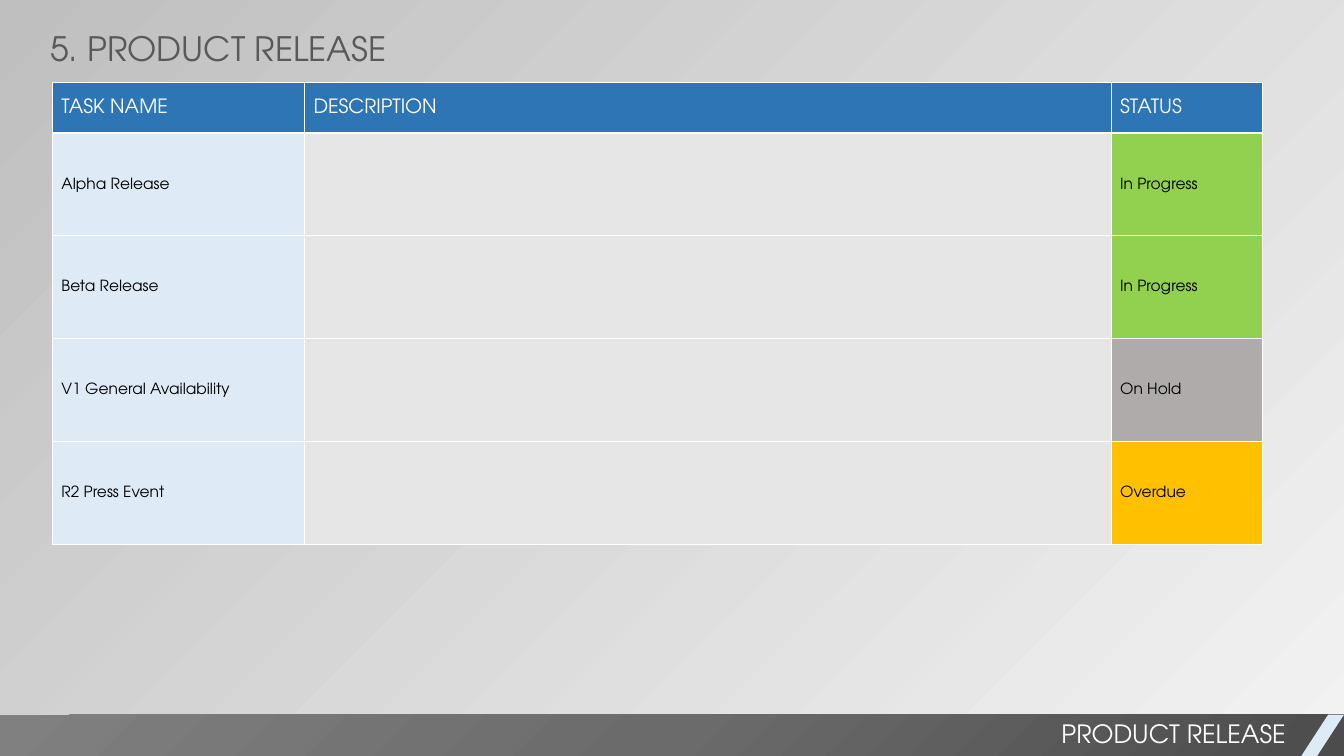
from dataclasses import dataclass

from lxml import etree
from pptx import Presentation
from pptx.dml.color import RGBColor
from pptx.enum.shapes import MSO_SHAPE as Shape
from pptx.enum.text import MSO_ANCHOR as Anchor, MSO_AUTO_SIZE as AutoSize, PP_ALIGN as Align
from pptx.oxml import parse_xml
from pptx.oxml.ns import nsdecls, qn
from pptx.util import Inches, Pt


@dataclass(frozen=True)
class Theme:
    font: str = "TeX Gyre Adventor"
    title_size: int = 24
    footer_size: int = 18
    header_size: int = 14
    body_size: int = 11
    white: str = "FFFFFF"
    black: str = "000000"
    title: str = "595959"
    header: str = "2E75B6"
    pale_blue: str = "DEEBF7"
    empty: str = "E7E6E6"
    backdrop: tuple = ("F2F2F2", "BFBFBF")
    band: tuple = ("4C4C4C", "6B6B6B", "808080")


STATUS_FILLS = {"In Progress": "92D050", "On Hold": "AFABAB", "Overdue": "FFC000"}
TASKS = [
    ("Alpha Release", "", "In Progress"),
    ("Beta Release", "", "In Progress"),
    ("V1 General Availability", "", "On Hold"),
    ("R2 Press Event", "", "Overdue"),
]


class SlideBuilder:
    def __init__(self, slide, theme):
        self.s, self.theme = slide, theme

    def background(self, colors, angle):
        fill = self.s.background.fill
        fill.gradient()
        fill.gradient_angle = angle
        for stop, color in zip(fill.gradient_stops, colors):
            stop.color.rgb = RGBColor.from_string(color)

    def shape(self, kind, x, y, w, h, color=None):
        sp = self.s.shapes.add_shape(kind, Inches(x), Inches(y), Inches(w), Inches(h))
        sp.shadow.inherit = False
        sp.line.fill.background()
        if color:
            sp.fill.solid()
            sp.fill.fore_color.rgb = RGBColor.from_string(color)
        return sp

    def radial_band(self, x, y, w, h, colors):
        """Rectangle whose gradient spreads from the bottom right corner."""
        sp = self.shape(Shape.RECTANGLE, x, y, w, h)
        sp.fill.gradient()
        step = 100000 // (len(colors) - 1)
        stops = "".join(f'<a:gs pos="{i * step}"><a:srgbClr val="{c}"/></a:gs>'
                        for i, c in enumerate(colors))
        spPr = sp._element.spPr
        spPr.replace(spPr.find(qn("a:gradFill")), parse_xml(
            f'<a:gradFill {nsdecls("a")} rotWithShape="1"><a:gsLst>{stops}</a:gsLst>'
            '<a:path path="circle"><a:fillToRect l="100000" t="100000"/></a:path></a:gradFill>'))

    def style(self, p, size, color):
        p.font.name, p.font.size, p.font.bold = self.theme.font, Pt(size), False
        p.font.color.rgb = RGBColor.from_string(color)

    def text(self, text, x, y, w, h, size, color, align=Align.LEFT, wrap=True):
        tf = self.s.shapes.add_textbox(Inches(x), Inches(y), Inches(w), Inches(h)).text_frame
        tf.word_wrap, tf.auto_size = wrap, AutoSize.SHAPE_TO_FIT_TEXT
        p = tf.paragraphs[0]
        p.text, p.alignment = text, align
        self.style(p, size, color)

    def cell(self, cell, text, fill, size, color):
        cell.margin_left, cell.margin_right = Inches(0.09), Inches(0.01)
        cell.margin_top, cell.margin_bottom = Inches(0.01), 0
        cell.vertical_anchor = Anchor.MIDDLE
        tcPr = cell._tc.get_or_add_tcPr()
        for side in "LRTB":
            ln = etree.SubElement(tcPr, qn(f"a:ln{side}"), w=str(Pt(1)))
            solid = etree.SubElement(ln, qn("a:solidFill"))
            etree.SubElement(solid, qn("a:srgbClr"), val=self.theme.white)
        cell.fill.solid()
        cell.fill.fore_color.rgb = RGBColor.from_string(fill)
        p = cell.text_frame.paragraphs[0]
        p.text = text
        self.style(p, size, color)

    def table(self, x, y, widths, heights, headers, tasks):
        t = self.theme
        table = self.s.shapes.add_table(
            len(heights), len(widths), Inches(x), Inches(y),
            Inches(sum(widths)), Inches(sum(heights))).table
        table.horz_banding = False
        for col, width in zip(table.columns, widths):
            col.width = Inches(width)
        for row, height in zip(table.rows, heights):
            row.height = Inches(height)
        for c, header in enumerate(headers):
            self.cell(table.cell(0, c), header, t.header, t.header_size, t.white)
        for r, task in enumerate(tasks, 1):
            fills = (t.pale_blue, t.empty, STATUS_FILLS[task[-1]])
            for c, (value, fill) in enumerate(zip(task, fills)):
                self.cell(table.cell(r, c), value, fill, t.body_size, t.black)


def main():
    prs = Presentation()
    prs.slide_width, prs.slide_height = Inches(13.33), Inches(7.5)
    t = Theme()
    b = SlideBuilder(prs.slides.add_slide(prs.slide_layouts[6]), t)
    b.background(t.backdrop, 135)

    # Footer band with its slanted accent
    b.radial_band(0, 7.09, 13.33, 0.42, t.band)
    accent = b.shape(Shape.PARALLELOGRAM, 12.9, 7.09, 0.43, 0.42, t.pale_blue)
    accent.adjustments[0] = 0.65
    b.text("PRODUCT RELEASE", 5.25, 7.08, 7.6, 0.4, t.footer_size, t.white, Align.RIGHT)

    # Title
    b.text("5. PRODUCT RELEASE", 0.4, 0.23, 3.57, 0.5, t.title_size, t.title, wrap=False)

    # Release tasks
    b.table(0.52, 0.82, (2.5, 8, 1.5), [0.5] + [1.02] * len(TASKS),
            ("TASK NAME", "DESCRIPTION", "STATUS"), TASKS)

    prs.save("out.pptx")


if __name__ == "__main__":
    main()
